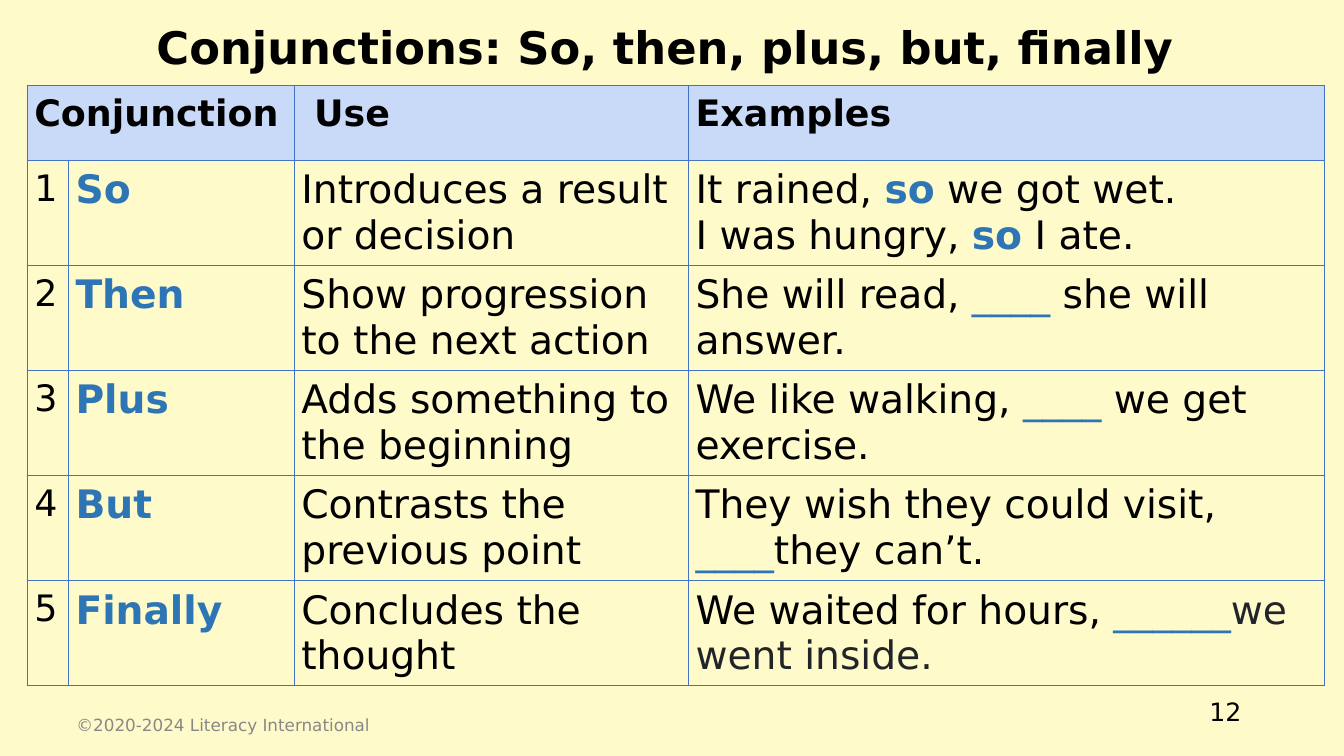
"""Build the conjunctions slide: a title, a table of uses and examples, and a footer."""
import dataclasses
import typing

import pptx
import pptx.dml.color
import pptx.enum.text
import pptx.oxml
import pptx.oxml.ns
import pptx.util

Inches = pptx.util.Inches
Align = pptx.enum.text.PP_ALIGN
Anchor = pptx.enum.text.MSO_ANCHOR


@dataclasses.dataclass(frozen=True)
class Theme:
    font: str = "DejaVu Sans"
    background: str = "FEFAC9"
    header_fill: str = "C9DAF8"
    border: str = "4472C4"
    text: str = "000000"
    accent: str = "2E75B6"
    soft_text: str = "212529"
    muted: str = "888888"
    title_size: int = 32
    body_size: int = 28
    label_size: int = 26
    page_size: int = 18
    footer_size: int = 12
    border_width: int = 1


THEME = Theme()


class Run(typing.NamedTuple):
    text: str
    size: int = THEME.body_size
    color: str = THEME.text
    bold: bool = False


class Label(typing.NamedTuple):
    left: float
    top: float
    width: float
    height: float
    run: Run
    alignment: Align
    anchor: Anchor


class Conjunction(typing.NamedTuple):
    word: str
    use: str
    examples: list[list[Run]]


def accent(text: str, bold: bool = False) -> Run:
    """Return a run in the accent colour."""
    return Run(text, color=THEME.accent, bold=bold)


LABELS = [
    Label(0.79, 0.15, 11.62, 0.84,
          Run("Conjunctions: So, then, plus, but, finally", THEME.title_size, bold=True),
          Align.CENTER, Anchor.TOP),
    Label(0.79, 6.76, 11.62, 0.6, Run("12", THEME.page_size), Align.RIGHT, Anchor.MIDDLE),
    Label(0.66, 6.99, 4.5, 0.4,
          Run("©2020-2024 Literacy International", THEME.footer_size, THEME.muted),
          Align.LEFT, Anchor.MIDDLE),
]
HEADERS = {0: "Conjunction", 2: " Use", 3: "Examples"}
COLUMN_WIDTHS = [0.41, 2.24, 3.91, 6.31]
HEADER_HEIGHT = 0.74
ROW_HEIGHT = 1.04
CONJUNCTIONS = [
    Conjunction("So", "Introduces a result or decision", [
        [Run("It rained, "), accent("so", True), Run(" we got wet.")],
        [Run("I was hungry, "), accent("so", True), Run(" I ate.")],
    ]),
    Conjunction("Then", "Show progression to the next action", [
        [Run("She will read, "), accent("____ "), Run("she will answer.")],
    ]),
    Conjunction("Plus", "Adds something to the beginning", [
        [Run("We like walking, "), accent("____ "), Run("we get exercise.")],
    ]),
    Conjunction("But", "Contrasts the previous point", [
        [Run("They wish they could visit, "), accent("____"), Run("they can’t.")],
    ]),
    Conjunction("Finally", "Concludes the thought", [
        [Run("We waited for hours, "), accent("______"),
         Run("we went inside.", color=THEME.soft_text)],
    ]),
]


def apply_format(target: typing.Any, values: dict[str, typing.Any]) -> None:
    """Set each named attribute on the target."""
    for name, value in values.items():
        setattr(target, name, value)


def rgb(color: str) -> pptx.dml.color.RGBColor:
    """Convert a hex string to a colour."""
    return pptx.dml.color.RGBColor.from_string(color)


def write_runs(paragraph: typing.Any, runs: list[Run]) -> None:
    """Add formatted runs to a paragraph."""
    for item in runs:
        run = paragraph.add_run()
        run.text = item.text
        apply_format(run.font, {"name": THEME.font, "size": pptx.util.Pt(item.size),
                                "bold": item.bold})
        run.font.color.rgb = rgb(item.color)


def add_label(slide: typing.Any, label: Label) -> None:
    """Add a one-line text box."""
    box = slide.shapes.add_textbox(*map(Inches, label[:4]))
    apply_format(box.text_frame, {"word_wrap": True, "vertical_anchor": label.anchor})
    paragraph = box.text_frame.paragraphs[0]
    paragraph.alignment = label.alignment
    write_runs(paragraph, [label.run])


def add_borders(cell: typing.Any) -> None:
    """Draw a thin line on all four sides of a cell."""
    properties = cell._tc.get_or_add_tcPr()
    for index, side in enumerate(("lnL", "lnR", "lnT", "lnB")):
        width = pptx.util.Pt(THEME.border_width)
        properties.insert(index, pptx.oxml.parse_xml(
            f'<a:{side} {pptx.oxml.ns.nsdecls("a")} w="{width}"><a:solidFill>'
            f'<a:srgbClr val="{THEME.border}"/></a:solidFill></a:{side}>'))


def fill_cell(cell: typing.Any, lines: list[list[Run]]) -> None:
    """Write one paragraph per line into a cell."""
    for index, runs in enumerate(lines):
        frame = cell.text_frame
        write_runs(frame.add_paragraph() if index else frame.paragraphs[0], runs)


def add_conjunction_table(slide: typing.Any) -> None:
    """Add the table with its header and one row per conjunction."""
    heights = [HEADER_HEIGHT] + [ROW_HEIGHT] * len(CONJUNCTIONS)
    table = slide.shapes.add_table(
        len(heights), len(COLUMN_WIDTHS), Inches(0.27), Inches(0.85),
        Inches(sum(COLUMN_WIDTHS)), Inches(sum(heights))).table
    apply_format(table, {"first_row": False, "horz_banding": False})
    for column, width in zip(table.columns, COLUMN_WIDTHS):
        column.width = Inches(width)
    for row_index, (row, height) in enumerate(zip(table.rows, heights)):
        row.height = Inches(height)
        for cell in row.cells:
            apply_format(cell, {f"margin_{side}": Inches(0.07)
                                for side in ("left", "right", "top", "bottom")})
            if row_index:
                cell.fill.background()
            else:
                cell.fill.solid()
                cell.fill.fore_color.rgb = rgb(THEME.header_fill)
            add_borders(cell)
    table.cell(0, 0).merge(table.cell(0, 1))
    for column_index, text in HEADERS.items():
        fill_cell(table.cell(0, column_index), [[Run(text, THEME.label_size, bold=True)]])
    for number, item in enumerate(CONJUNCTIONS, start=1):
        contents = [[[Run(str(number), THEME.label_size)]], [[accent(item.word, True)]],
                    [[Run(item.use)]], item.examples]
        for column_index, lines in enumerate(contents):
            fill_cell(table.cell(number, column_index), lines)


def main() -> None:
    """Create and save the presentation."""
    presentation = pptx.Presentation()
    apply_format(presentation, {"slide_width": Inches(13.33), "slide_height": Inches(7.5)})
    slide = presentation.slides.add_slide(presentation.slide_layouts[6])
    slide.background.fill.solid()
    slide.background.fill.fore_color.rgb = rgb(THEME.background)
    add_conjunction_table(slide)
    for label in LABELS:
        add_label(slide, label)
    presentation.save("out.pptx")


if __name__ == "__main__":
    main()
